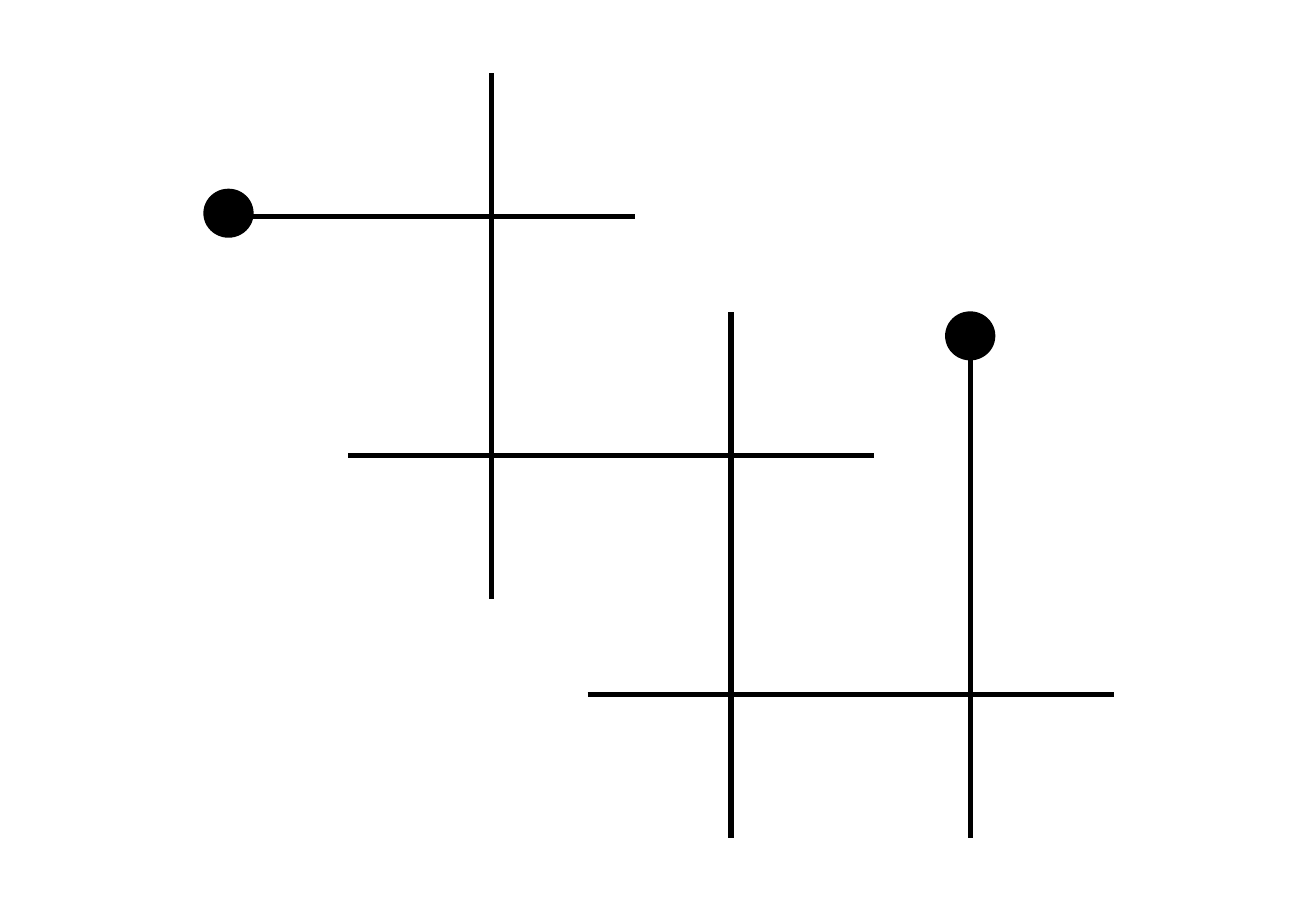
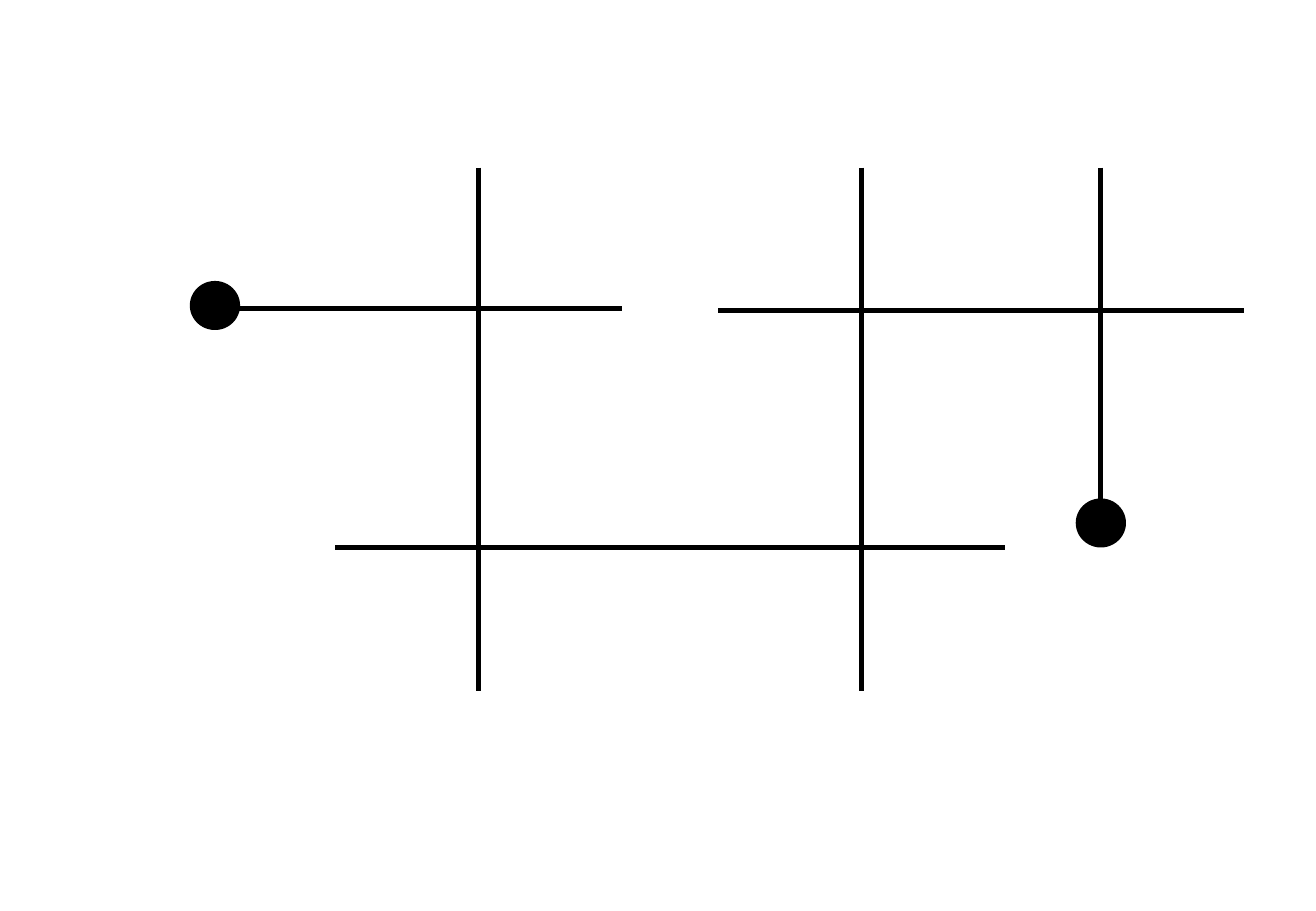
"""Draw two diagrams of crossing lines with round end points."""
from dataclasses import dataclass
from itertools import pairwise

from lxml import etree
from pptx import Presentation
from pptx.dml.color import RGBColor
from pptx.enum.shapes import MSO_CONNECTOR, MSO_SHAPE
from pptx.oxml.ns import qn
from pptx.shapes.group import GroupShape
from pptx.util import Pt

BLACK = RGBColor(0x00, 0x00, 0x00)
STRAIGHT = MSO_CONNECTOR.STRAIGHT
DOT = MSO_SHAPE.FLOWCHART_CONNECTOR
SLIDE_W, SLIDE_H = 779.76, 540
DOT_W, DOT_H = 28.8, 28.1
STEP, STUB = 141.75, 85
LINE_W, DOT_LINE_W = 3, 1


@dataclass(frozen=True)
class Dot:
    cx: float
    cy: float

    @property
    def right(self) -> float:
        return self.cx + DOT_W / 2

    @property
    def top(self) -> float:
        return self.cy - DOT_H / 2

    @property
    def bottom(self) -> float:
        return self.cy + DOT_H / 2


@dataclass(frozen=True)
class Row:
    y: float
    stops: tuple[float, ...]

    def points(self) -> list[tuple[float, float]]:
        return [(x, self.y) for x in self.stops]


@dataclass(frozen=True)
class Column:
    x: float
    stops: tuple[float, ...]

    def points(self) -> list[tuple[float, float]]:
        return [(self.x, y) for y in self.stops]


@dataclass(frozen=True)
class Diagram:
    dots: tuple[Dot, ...]
    tracks: tuple[Row | Column, ...]


def across(first: float, last: float) -> tuple[float, ...]:
    return first - STUB, first, last, last + STUB


def stair_diagram() -> Diagram:
    x1, x2, x3 = (291.4 + i * STEP for i in range(3))
    y1, y2, y3 = (128.3 + i * STEP for i in range(3))
    start, end = Dot(135.4, 126.4), Dot(x3, 199.1)
    return Diagram((start, end), (
        Row(y1, (start.right, x1, x1 + STUB)),
        Row(y2, across(x1, x2)),
        Row(y3, across(x2, x3)),
        Column(x1, across(y1, y2)),
        Column(x2, across(y2, y3)),
        Column(x3, (end.bottom, y3, y3 + STUB)),
    ))


def bridge_diagram() -> Diagram:
    x1, x2, x3 = 283.6, 510.5, 652.3
    y_left, y_right, y_low = 182.9, 184.3, 324.7
    start, end = Dot(127.4, 181.1), Dot(x3, 310)
    return Diagram((start, end), (
        Row(y_left, (start.right, x1, x1 + STUB)),
        Row(y_right, across(x2, x3)),
        Row(y_low, across(x1, x2)),
        Column(x1, across(y_right, y_low)),
        Column(x2, across(y_right, y_low)),
        Column(x3, (y_right - STUB, y_right, end.top)),
    ))


def add_dot(group: GroupShape, dot: Dot) -> None:
    sp = group.shapes.add_shape(
        DOT, Pt(dot.cx - DOT_W / 2), Pt(dot.top), Pt(DOT_W), Pt(DOT_H))
    sp.shadow.inherit = False
    sp.fill.solid()
    sp.fill.fore_color.rgb = BLACK
    sp.line.color.rgb = BLACK
    sp.line.width = Pt(DOT_LINE_W)


def add_track(group: GroupShape, track: Row | Column) -> None:
    for (x1, y1), (x2, y2) in pairwise(track.points()):
        line = group.shapes.add_connector(STRAIGHT, Pt(x1), Pt(y1), Pt(x2), Pt(y2))
        line.line.color.rgb = BLACK
        line.line.width = Pt(LINE_W)
        etree.SubElement(line._element.spPr, qn("a:effectLst"))


def main() -> None:
    prs = Presentation()
    prs.slide_width, prs.slide_height = Pt(SLIDE_W), Pt(SLIDE_H)
    for diagram in (stair_diagram(), bridge_diagram()):
        s = prs.slides.add_slide(prs.slide_layouts[6])
        group = s.shapes.add_group_shape()
        for dot in diagram.dots:
            add_dot(group, dot)
        for track in diagram.tracks:
            add_track(group, track)
    prs.save("out.pptx")


if __name__ == "__main__":
    main()
